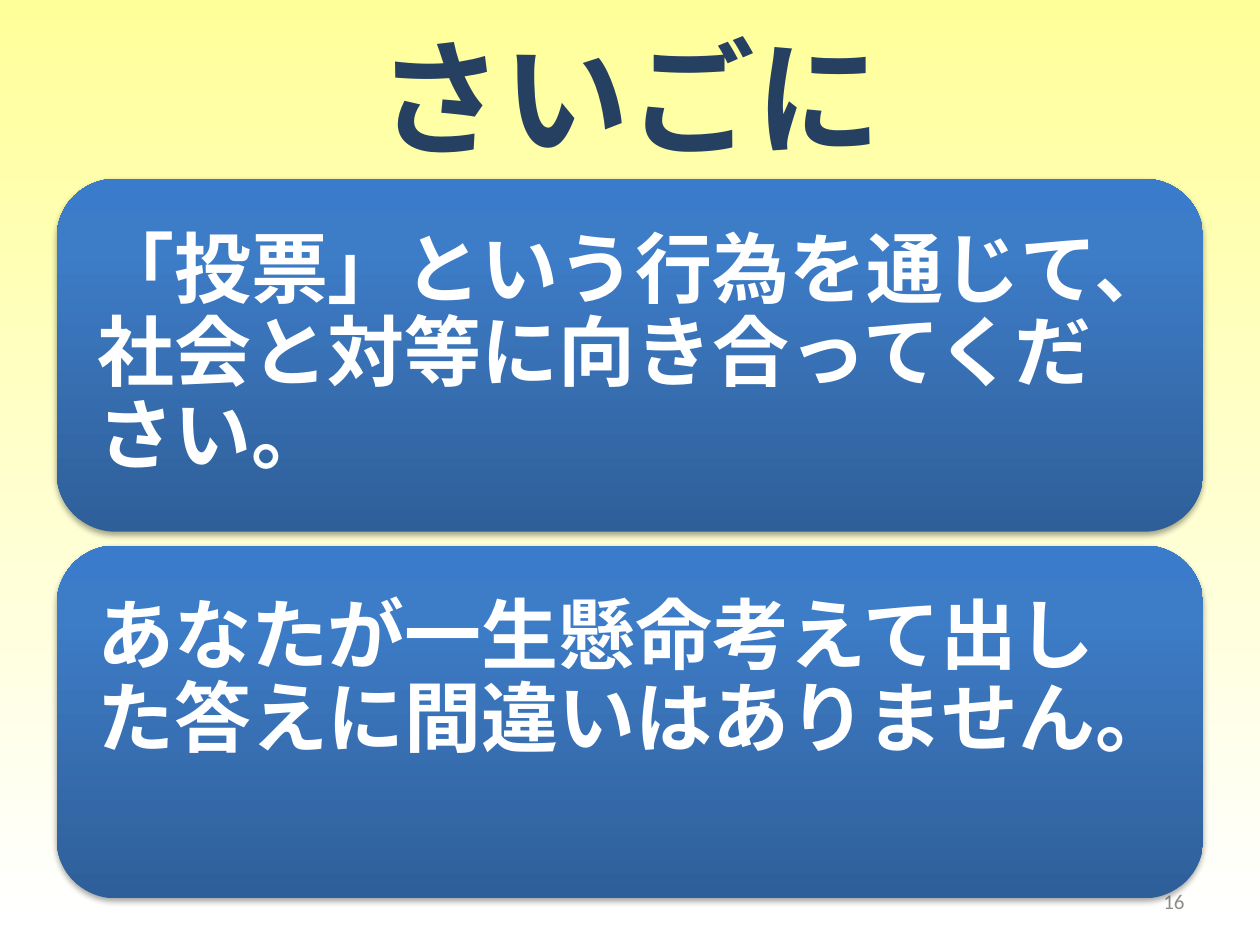
import pptx
import pptx.util
import pptx.dml.color
import pptx.enum.lang
import pptx.enum.shapes
import pptx.enum.text
import pptx.oxml
import pptx.oxml.ns
from pptx.util import Inches

RGBColor = pptx.dml.color.RGBColor
ALIGN = pptx.enum.text.PP_ALIGN

NAVY = RGBColor(0x25, 0x40, 0x61)
GREY = RGBColor(0x8C, 0x8C, 0x8C)
WHITE = RGBColor(0xFF, 0xFF, 0xFF)
YELLOW = RGBColor(0xFF, 0xFF, 0x99)
BLUE_DARK = RGBColor(0x2F, 0x5F, 0x99)
BLUE_MID = RGBColor(0x3D, 0x7C, 0xC7)
BLUE_LIGHT = RGBColor(0x3A, 0x7C, 0xCB)

JAPANESE_FONT = "Noto Sans CJK JP"
A_NS = pptx.oxml.ns.nsdecls("a")

CARD_LEFT, CARD_TOP, CARD_W, CARD_H = 0.45, 1.42, 9.1, 2.8
CARD_STEP = 2.91
CARD_PAD = 0.14
LINE_H = 0.66
# Each message with the number of empty lines kept below it
MESSAGES = [
    ("「投票」という行為を通じて、社会と対等に向き合ってください。", 0),
    ("あなたが一生懸命考えて出した答えに間違いはありません。", 1),
]


def set_gradient(fill, stops, angle):
    """Fill with (percent, colour) stops; the angle runs clockwise."""
    fill.gradient()
    fill.gradient_angle = 360 - angle
    gs_list = fill._fill._gradFill.find(pptx.oxml.ns.qn("a:gsLst"))
    for gs in list(gs_list):
        gs_list.remove(gs)
    for percent, colour in stops:
        gs_list.append(pptx.oxml.parse_xml(
            f'<a:gs {A_NS} pos="{percent * 1000}"><a:srgbClr val="{colour}"/></a:gs>'))


def add_shadow(s):
    s.shadow.inherit = False
    effects = s._element.spPr.find(pptx.oxml.ns.qn("a:effectLst"))
    effects.append(pptx.oxml.parse_xml(
        f'<a:outerShdw {A_NS} blurRad="{pptx.util.Pt(3.1)}" dist="{pptx.util.Pt(1.8)}"'
        ' dir="5400000" rotWithShape="0"><a:srgbClr val="000000">'
        '<a:alpha val="35000"/></a:srgbClr></a:outerShdw>'))


def add_text(slide, text, left, top, width, height, *, size, colour,
             font=JAPANESE_FONT, bold=False, align=ALIGN.LEFT,
             line_spacing=None, margin_x=0.1, margin_top=0.05, margin_bottom=0.05):
    s = slide.shapes.add_textbox(
        Inches(left), Inches(top), Inches(width), Inches(height))
    tf = s.text_frame
    tf.word_wrap = True
    tf.vertical_anchor = pptx.enum.text.MSO_ANCHOR.MIDDLE
    tf.margin_left = tf.margin_right = Inches(margin_x)
    tf.margin_top, tf.margin_bottom = Inches(margin_top), Inches(margin_bottom)
    p = tf.paragraphs[0]
    p.alignment = align
    p.line_spacing = line_spacing
    r = p.add_run()
    r.text = text
    r.font.name = font
    r.font.size = pptx.util.Pt(size)
    r.font.bold = bold
    r.font.color.rgb = colour
    r.font.language_id = pptx.enum.lang.MSO_LANGUAGE_ID.JAPANESE
    r.font._element.find(pptx.oxml.ns.qn("a:latin")).addnext(
        pptx.oxml.parse_xml(f'<a:ea {A_NS} typeface="{font}"/>'))


def add_card(slide, text, top, empty_lines):
    s = slide.shapes.add_shape(
        pptx.enum.shapes.MSO_SHAPE.ROUNDED_RECTANGLE,
        Inches(CARD_LEFT), Inches(top), Inches(CARD_W), Inches(CARD_H))
    set_gradient(s.fill, [(0, BLUE_DARK), (80, BLUE_MID), (100, BLUE_LIGHT)], 270)
    s.line.fill.background()
    add_shadow(s)
    add_text(slide, text, CARD_LEFT + CARD_PAD, top + CARD_PAD,
             CARD_W - 2 * CARD_PAD, CARD_H - 2 * CARD_PAD,
             size=44, colour=WHITE, bold=True, line_spacing=0.9,
             margin_x=0.18, margin_top=0.09,
             margin_bottom=0.09 + empty_lines * LINE_H)


def main():
    prs = pptx.Presentation()
    prs.slide_width, prs.slide_height = Inches(10), Inches(7.5)
    slide = prs.slides.add_slide(prs.slide_layouts[6])
    set_gradient(slide.background.fill, [(0, YELLOW), (98, WHITE)], 90)

    add_text(slide, "さいごに", 0.5, 0.13, 9, 1.25,
             size=72, colour=NAVY, bold=True, align=ALIGN.CENTER)
    add_text(slide, "16", 7.17, 6.95, 2.33, 0.4,
             size=12, colour=GREY, font="Calibri", align=ALIGN.RIGHT)
    for i, (text, empty_lines) in enumerate(MESSAGES):
        add_card(slide, text, CARD_TOP + i * CARD_STEP, empty_lines)

    prs.save("out.pptx")


if __name__ == "__main__":
    main()
